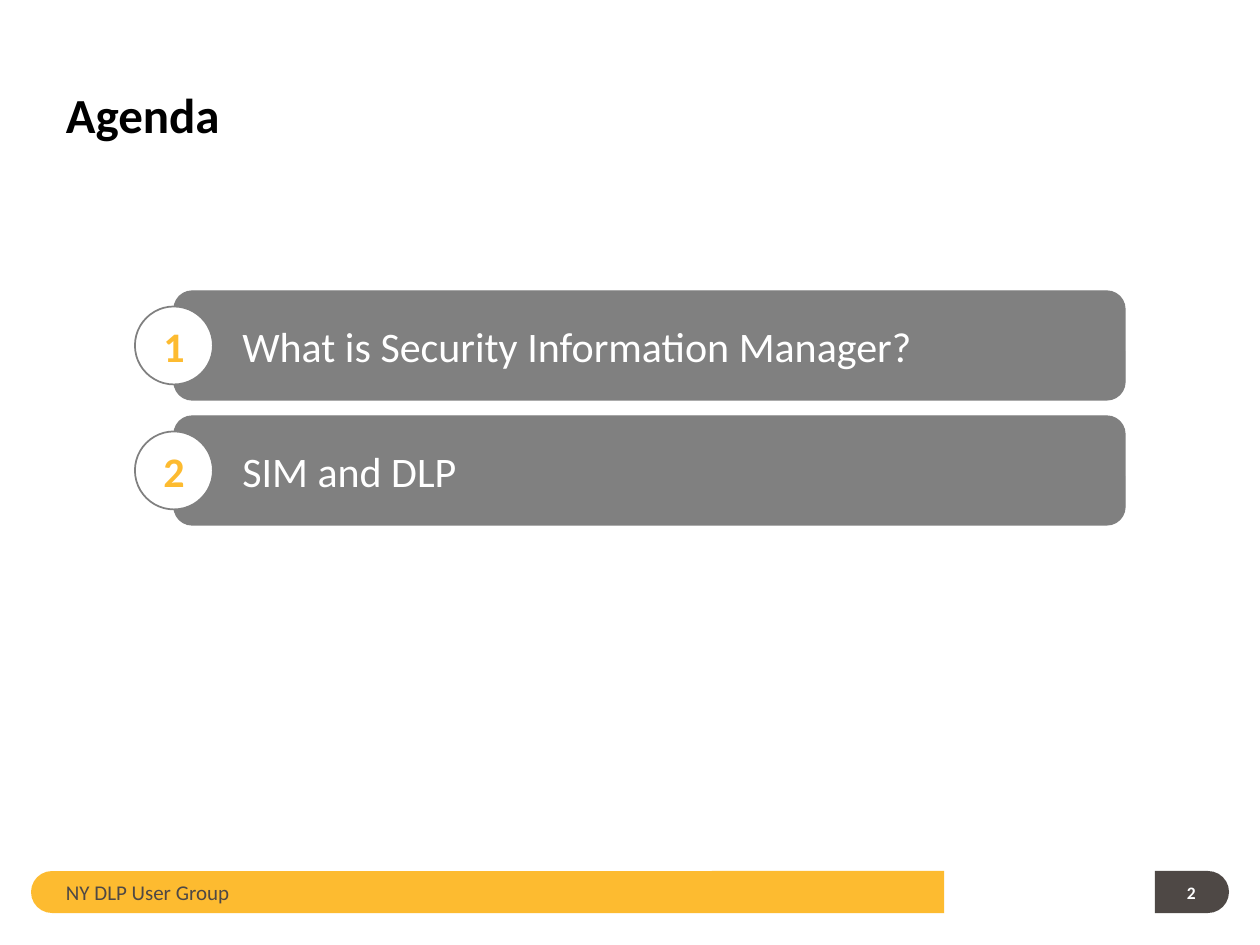
import pptx
import pptx.util
from pptx.dml.color import RGBColor
from pptx.enum.shapes import MSO_SHAPE
from pptx.enum.text import MSO_ANCHOR, PP_ALIGN

SCALE = 914400 / 126  # EMU in one px
YELLOW, DARK, GREY, WHITE, BLACK = "FDBB30", "4E4845", "808080", "FFFFFF", "000000"


def px(length):
    return pptx.util.Emu(round(length * SCALE))


def color(hex_text):
    return RGBColor.from_string(hex_text)


def write(shape, text, size, hex_text, bold=False, insets=(13, 6, 13, 6),
          anchor=MSO_ANCHOR.MIDDLE, align=PP_ALIGN.LEFT, wrap=False):
    frame = shape.text_frame
    frame.word_wrap = wrap
    frame.vertical_anchor = anchor
    frame.margin_left, frame.margin_top, frame.margin_right, frame.margin_bottom = map(px, insets)
    para = frame.paragraphs[0]
    para.text = text
    para.alignment = align
    para.font.name = "Calibri"
    para.font.size = pptx.util.Pt(size)
    para.font.bold = bold
    para.font.color.rgb = color(hex_text)
    return para


def add_filled(page, kind, left, top, width, height, fill, line=None, line_width=1):
    shape = page.shapes.add_shape(kind, px(left), px(top), px(width), px(height))
    shape.shadow.inherit = False
    shape.fill.solid()
    shape.fill.fore_color.rgb = color(fill)
    if line:
        shape.line.color.rgb = color(line)
        shape.line.width = pptx.util.Pt(line_width)
    else:
        shape.line.fill.background()
    return shape


def add_text(page, left, top, width, height, text, size, hex_text, **options):
    box = page.shapes.add_textbox(px(left), px(top), px(width), px(height))
    return write(box, text, size, hex_text, **options)


def add_end_bar(page, left, top, width, height, fill, rotation):
    """Horizontal bar with one round end, made by turning an upright shape."""
    bar = add_filled(page, MSO_SHAPE.ROUND_2_SAME_RECTANGLE,
                     left + (width - height) / 2, top + (height - width) / 2,
                     height, width, fill)
    bar.adjustments[0] = 0.5
    bar.adjustments[1] = 0
    bar.rotation = rotation


def add_title(page, left, top, width, height, text):
    para = add_text(page, left, top, width, height, text, 28, BLACK, bold=True,
                    anchor=MSO_ANCHOR.BOTTOM, wrap=True)
    para.line_spacing = 0.9


def add_agenda(page, left, top, width, items, row_height=109, pitch=125, badge=78):
    for index, item in enumerate(items):
        row_top = top + index * pitch
        # Bar starts at the middle of its number badge
        bar = add_filled(page, MSO_SHAPE.ROUNDED_RECTANGLE, left + badge / 2, row_top,
                         width - badge / 2, row_height, GREY, GREY, 0.75)
        write(bar, item, 24, WHITE, insets=(63, 6, 13, 6))
        circle = add_filled(page, MSO_SHAPE.OVAL, left, row_top + (row_height - badge) / 2,
                            badge, badge, WHITE, GREY)
        write(circle, str(index + 1), 24, YELLOW, bold=True,
              align=PP_ALIGN.CENTER, wrap=True)


def add_footer(page, left, top, width, height, text, number):
    add_end_bar(page, left, top, 913, height, YELLOW, 270)
    add_end_bar(page, left + width - 74, top, 74, height, DARK, 90)
    even = (13, 13, 13, 13)
    add_text(page, left + 22, top + 5, 577, 32, text, 12, DARK, insets=even)
    add_text(page, left + width - 50, top + 11, 21, 21, number, 10, WHITE,
             bold=True, insets=even)


def main():
    deck = pptx.Presentation()
    deck.slide_width, deck.slide_height = px(1260), px(945)
    page = deck.slides.add_slide(deck.slide_layouts[6])
    add_footer(page, 31, 871, 1198, 42, "NY DLP User Group", "2")
    add_title(page, 53, 34, 1155, 116, "Agenda")
    add_agenda(page, 135, 291, 990,
               ["What is Security Information Manager?", "SIM and DLP"])
    deck.save("out.pptx")


if __name__ == "__main__":
    main()
